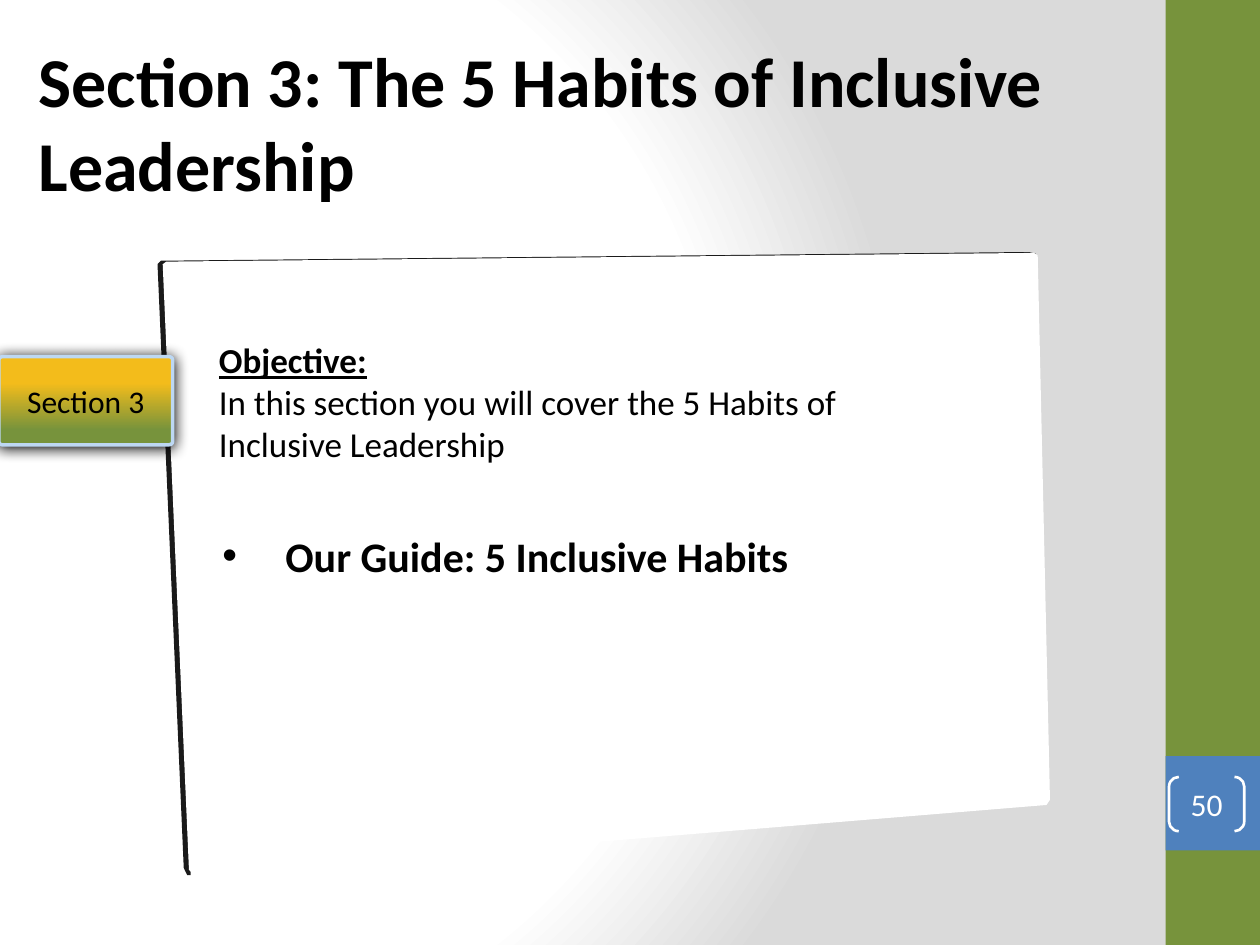
from copy import deepcopy
from dataclasses import dataclass

from lxml import etree
from pptx import Presentation
from pptx.dml.color import RGBColor
from pptx.enum import shapes, text
from pptx.oxml import ns
from pptx.util import Pt


@dataclass(frozen=True)
class Theme:
    font: str = "Calibri"
    black: str = "000000"
    white: str = "FFFFFF"
    grey: str = "DADADA"
    green: str = "77933C"
    blue: str = "4F81BD"
    yellow: str = "F3BC1B"
    pale_blue: str = "BDD8F3"
    edge: str = "1A1A1A"
    title: int = 40
    habit: int = 24
    body: int = 20
    label: int = 18


THEME = Theme()
SHAPE = shapes.MSO_SHAPE


def rgb(color):
    return RGBColor.from_string(color)


def add_xml(parent, tag, **attributes):
    values = {name: str(value) for name, value in attributes.items()}
    return etree.SubElement(parent, ns.qn(tag), values)


def paint(shape, fill=None, line=None, width=1):
    shape.shadow.inherit = False
    if fill:
        shape.fill.solid()
        shape.fill.fore_color.rgb = rgb(fill)
    else:
        shape.fill.background()
    if line:
        shape.line.color.rgb = rgb(line)
        shape.line.width = Pt(width)
    else:
        shape.line.fill.background()


def add_box(slide, kind, box, fill=None, line=None, width=1, adjustment=None):
    shape = slide.shapes.add_shape(kind, *map(Pt, box))
    paint(shape, fill, line, width)
    if adjustment is not None:
        shape.adjustments[0] = adjustment
    return shape


def style(paragraph, size, color=THEME.black, bold=False, underline=False):
    for run in paragraph.runs:
        run.font.name = THEME.font
        run.font.size = Pt(size)
        run.font.color.rgb = rgb(color)
        run.font.bold = bold
        run.font.underline = underline


def add_text(slide, box, content):
    frame = slide.shapes.add_textbox(*map(Pt, box)).text_frame
    frame.word_wrap = True
    frame.text = content
    return frame.paragraphs


def label(shape, content, color):
    frame = shape.text_frame
    frame.text = content
    frame.vertical_anchor = text.MSO_ANCHOR.MIDDLE
    frame.paragraphs[0].alignment = text.PP_ALIGN.CENTER
    style(frame.paragraphs[0], THEME.label, color)
    return frame


def set_stops(fill, stops):
    for stop, (position, color) in zip(fill.gradient_stops, stops):
        stop.position = position
        stop.color.rgb = rgb(color)


def background(slide):
    fill = slide.background.fill
    fill.gradient()
    gradient = next(slide.element.iter(ns.qn("a:gradFill")))
    stop_list = gradient.find(ns.qn("a:gsLst"))
    stop_list.append(deepcopy(stop_list[0]))
    set_stops(fill, [(0, THEME.white), (0.75, THEME.white), (1, THEME.grey)])
    gradient.remove(gradient.find(ns.qn("a:lin")))
    circle = add_xml(gradient, "a:path", path="circle")
    add_xml(circle, "a:fillToRect", l=20000, t=50000, r=100000, b=50000)


def side_band(slide, box):
    left, top, width, height = box
    number_top = top + 432
    add_box(slide, SHAPE.RECTANGLE, box, THEME.green)
    add_box(slide, SHAPE.RECTANGLE, (left, number_top, width, width), THEME.blue)
    brackets = add_box(slide, SHAPE.DOUBLE_BRACKET, (left + 2, number_top + 12, 43, 31),
                       line=THEME.white, width=1.5, adjustment=0.18)
    frame = label(brackets, "50", THEME.white)
    frame.margin_left = frame.margin_right = frame.margin_top = frame.margin_bottom = 0


def title(slide, box):
    paragraph, = add_text(slide, box, "Section 3: The 5 Habits of Inclusive Leadership")
    style(paragraph, THEME.title, bold=True)


def add_panel(slide, box, corners, fill):
    left, top = box[:2]
    points = [(Pt(left + x), Pt(top + y)) for x, y in corners]
    builder = slide.shapes.build_freeform(*points[0])
    builder.add_line_segments(points[1:], close=True)
    paint(builder.convert_to_shape(), fill)


def card(slide, box):
    edge = [(0, 7), (2, 5), (498, 0), (502, 1), (502, 2), (6, 6), (19, 356), (17, 356), (15, 352)]
    face = [(3, 7), (5, 5.5), (501, 0.5), (503, 2), (510, 313), (508, 316), (21, 356), (18, 353)]
    add_panel(slide, box, edge, THEME.edge)
    add_panel(slide, box, face, THEME.white)


def objective(slide, box):
    heading, body = add_text(
        slide, box,
        "Objective:\nIn this section you will cover the 5 Habits of Inclusive Leadership")
    style(heading, THEME.body, bold=True, underline=True)
    style(body, THEME.body)


def habit(slide, box):
    paragraph, = add_text(slide, box, "Our Guide: 5 Inclusive Habits")
    properties = paragraph._p.get_or_add_pPr()
    properties.set("marL", str(Pt(36)))
    properties.set("indent", str(-Pt(36)))
    add_xml(properties, "a:buFont", typeface="Arial")
    add_xml(properties, "a:buChar", char="•")
    style(paragraph, THEME.habit, bold=True)


def section_tab(slide, box):
    tab = add_box(slide, SHAPE.ROUNDED_RECTANGLE, box, THEME.green, THEME.pale_blue, 2, 0.04)
    tab.fill.gradient()
    tab.fill.gradient_angle = 90
    set_stops(tab.fill, [(0.17, THEME.green), (0.7, THEME.yellow)])
    effects = tab._element.spPr.find(ns.qn("a:effectLst"))
    shadow = add_xml(effects, "a:outerShdw", blurRad=Pt(8.5), dist=Pt(1), dir=5400000,
                     rotWithShape=0)
    add_xml(shadow, "a:srgbClr", val=THEME.black)
    label(tab, "Section 3", THEME.black)


def main():
    presentation = Presentation()
    presentation.slide_width, presentation.slide_height = Pt(720), Pt(540)
    slide = presentation.slides.add_slide(presentation.slide_layouts[6])
    background(slide)
    side_band(slide, (666, 0, 54, 540))
    card(slide, (90, 144, 510, 356))
    title(slide, (15, 18, 597, 104))
    habit(slide, (120, 299.5, 402, 75))
    objective(slide, (118, 190, 426, 80))
    section_tab(slide, (-0.7, 203.8, 99.4, 50.4))
    presentation.save("out.pptx")


if __name__ == "__main__":
    main()
